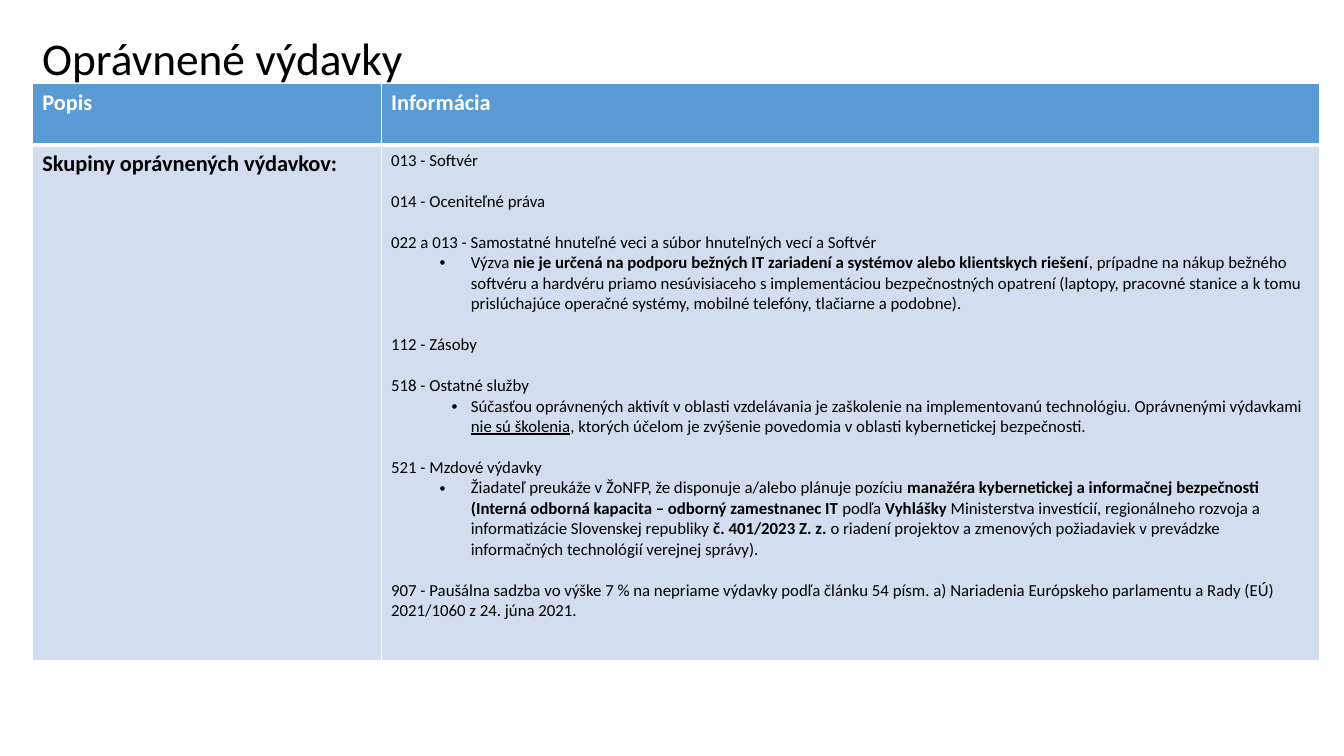
from pptx import Presentation
from pptx.dml.color import RGBColor
from pptx.enum.text import MSO_ANCHOR, PP_ALIGN
from pptx.oxml.ns import qn
from pptx.util import Inches, Pt
from lxml.etree import Element, SubElement

COLORS = {"ink": "000000", "white": "FFFFFF", "head": "5B9BD5", "body": "D2DEEF"}
BASE = {"name": "Calibri", "bold": False}
TITLE = BASE | {"size": Pt(32.4)}
LABEL = BASE | {"size": Pt(16), "bold": True}
SMALL = BASE | {"size": Pt(12)}
BOLD = {"bold": True}
LINE = {"underline": True}
GAP = Pt(14.65)

GROUPS = [
    ("013 - Softvér", None, []),
    ("014 - Oceniteľné práva", None, []),
    ("022 a 013 - Samostatné hnuteľné veci a súbor hnuteľných vecí a Softvér", 0.31, [
        ("Výzva ", {}),
        ("nie je určená na podporu bežných IT zariadení a systémov alebo klientskych riešení", BOLD),
        (", prípadne na nákup bežného softvéru a hardvéru priamo nesúvisiaceho s implementáciou "
         "bezpečnostných opatrení (laptopy, pracovné stanice a k tomu prislúchajúce operačné "
         "systémy, mobilné telefóny, tlačiarne a podobne).", {}),
    ]),
    ("112 - Zásoby", None, []),
    ("518 - Ostatné služby", 0.19, [
        ("Súčasťou oprávnených aktivít v oblasti vzdelávania je zaškolenie na implementovanú "
         "technológiu. Oprávnenými výdavkami ", {}),
        ("nie sú školenia", LINE),
        (", ktorých účelom je zvýšenie povedomia v oblasti kybernetickej bezpečnosti.", {}),
    ]),
    ("521 - Mzdové výdavky", 0.31, [
        ("Žiadateľ preukáže v ŽoNFP, že disponuje a/alebo plánuje pozíciu ", {}),
        ("manažéra kybernetickej a informačnej bezpečnosti (Interná odborná kapacita – odborný "
         "zamestnanec IT ", BOLD),
        ("podľa ", {}),
        ("Vyhlášky", BOLD),
        (" Ministerstva investícií, regionálneho rozvoja a informatizácie Slovenskej republiky ", {}),
        ("č. 401/2023 Z. z. ", BOLD),
        ("o riadení projektov a zmenových požiadaviek v prevádzke informačných technológií "
         "verejnej správy).", {}),
    ]),
    ("907 - Paušálna sadzba vo výške 7 % na nepriame výdavky podľa článku 54 písm. a) Nariadenia "
     "Európskeho parlamentu a Rady (EÚ) 2021/1060 z 24. júna 2021.", None, []),
]


def write(para, text, form, color="ink"):
    """Add a run with the given font values."""
    run = para.add_run()
    run.text = text
    for key, value in form.items():
        setattr(run.font, key, value)
    run.font.color.rgb = RGBColor.from_string(COLORS[color])


def bullet(para, hang):
    """Give a paragraph a hanging bullet."""
    props = para._p.get_or_add_pPr()
    props.set("marL", str(Inches(0.79)))
    props.set("indent", str(-Inches(hang)))
    SubElement(props, qn("a:buFont")).set("typeface", "Arial")
    SubElement(props, qn("a:buChar")).set("char", "•")


def paint(cell, color, under):
    """Fill a cell and draw its white borders, the lower one as wide as given."""
    cell.fill.solid()
    cell.fill.fore_color.rgb = RGBColor.from_string(COLORS[color])
    props = cell._tc.get_or_add_tcPr()
    widths = {"lnL": 1, "lnR": 1, "lnT": 1, "lnB": under}
    for spot, (tag, width) in enumerate(widths.items()):
        edge = Element(qn("a:" + tag), w=str(Pt(width)))
        fill = SubElement(edge, qn("a:solidFill"))
        SubElement(fill, qn("a:srgbClr")).set("val", COLORS["white"])
        props.insert(spot, edge)


def title(slide, left, top, width, height):
    """Place the slide title in the box."""
    box = slide.shapes.add_textbox(*map(Inches, (left, top, width, height)))
    frame = box.text_frame
    frame.word_wrap = True
    frame.vertical_anchor = MSO_ANCHOR.MIDDLE
    frame.margin_top = frame.margin_bottom = 0
    para = frame.paragraphs[0]
    para.line_spacing = 0.9
    write(para, "Oprávnené výdavky", TITLE)


def groups(frame):
    """List the cost groups, each with its bullet below."""
    for spot, (name, hang, runs) in enumerate(GROUPS):
        para = frame.add_paragraph() if spot else frame.paragraphs[0]
        if spot:
            para.space_before = GAP
        write(para, name, SMALL)
        if runs:
            para = frame.add_paragraph()
            bullet(para, hang)
            for text, extra in runs:
                write(para, text, SMALL | extra)


def costs(slide, left, top, width, height):
    """Place the table of eligible costs in the box."""
    table = slide.shapes.add_table(2, 2, *map(Inches, (left, top, width, height))).table
    first, head = 3.46, 0.61
    for col, size in zip(table.columns, (first, width - first)):
        col.width = Inches(size)
    for row, size in zip(table.rows, (head, height - head)):
        row.height = Inches(size)
    for col, text in enumerate(("Popis", "Informácia")):
        write(table.cell(0, col).text_frame.paragraphs[0], text, LABEL, "white")
        paint(table.cell(0, col), "head", 3)
        paint(table.cell(1, col), "body", 1)
    para = table.cell(1, 0).text_frame.paragraphs[0]
    para.alignment = PP_ALIGN.JUSTIFY
    write(para, "Skupiny oprávnených výdavkov:", LABEL)
    groups(table.cell(1, 1).text_frame)


def main():
    """Build the slide and save it."""
    deck = Presentation()
    deck.slide_width, deck.slide_height = Inches(13.33), Inches(7.5)
    slide = deck.slides.add_slide(deck.slide_layouts[6])
    title(slide, 0.32, 0.35, 10, 0.51)
    costs(slide, 0.32, 0.83, 12.77, 5.72)
    deck.save("out.pptx")


if __name__ == "__main__":
    main()
